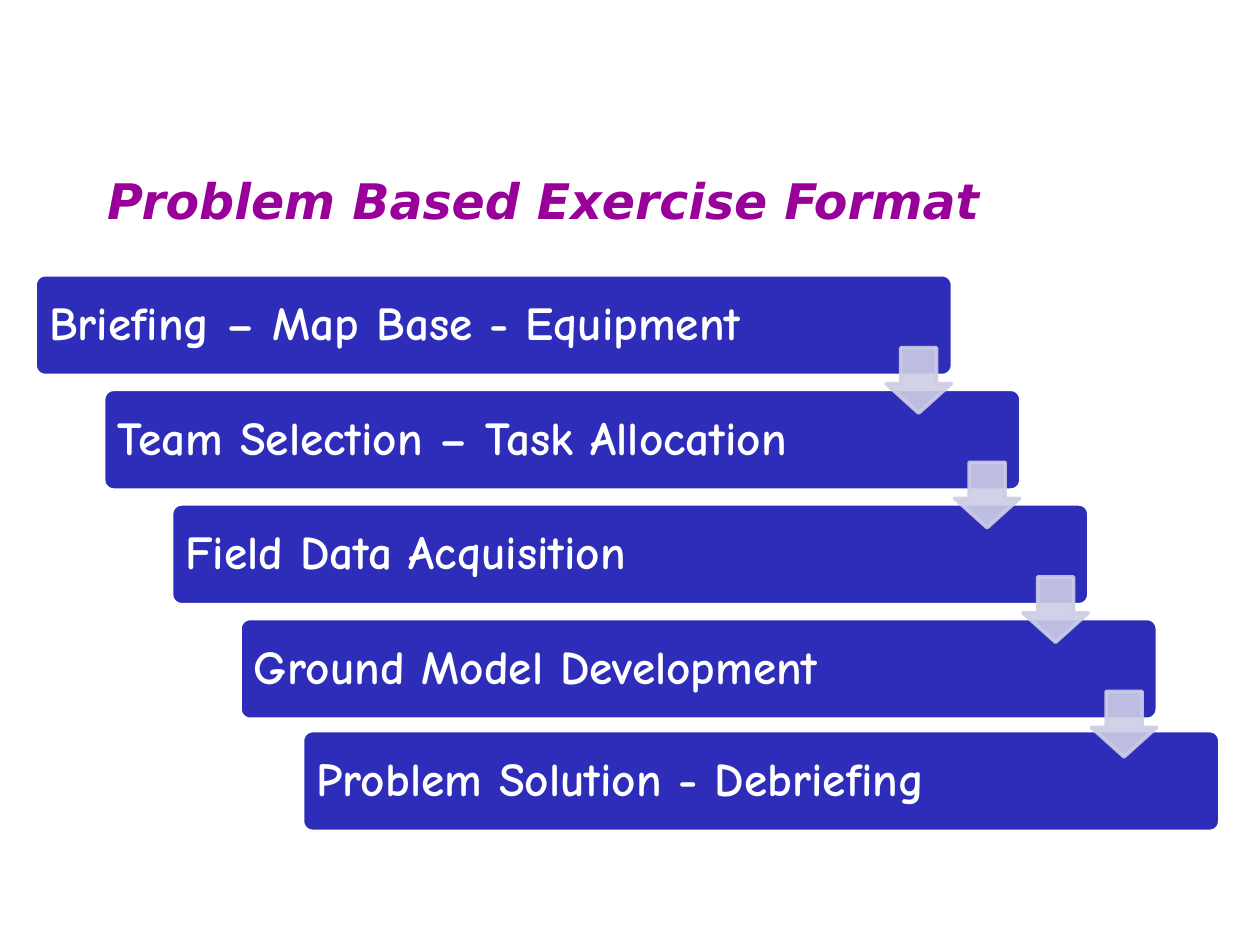
"""Build the stepped process slide for the problem based exercise format."""
import pptx
import pptx.dml.color
import pptx.enum.shapes
import pptx.enum.text
import pptx.oxml.ns
import pptx.util
from lxml import etree

Cm, Pt = pptx.util.Cm, pptx.util.Pt
MSO = pptx.enum.shapes.MSO_SHAPE
MIDDLE = pptx.enum.text.MSO_ANCHOR.MIDDLE
LEFT = pptx.enum.text.PP_ALIGN.LEFT

THEME = {
    "bar": "2D2DB9",
    "edge": "FFFFFF",
    "arrow": "CDCDE6",
    "title": {"name": "DejaVu Sans", "size": Pt(28), "bold": True, "italic": True, "color": "990099"},
    "step": {"name": "Comic Neue", "size": Pt(27), "bold": True, "italic": False, "color": "FFFFFF"},
}
STEPS = [
    ("Briefing – Map Base - Equipment", 0.71, 5.54),
    ("Team Selection – Task Allocation", 2.09, 7.85),
    ("Field Data Acquisition", 3.46, 10.16),
    ("Ground Model Development", 4.84, 12.47),
    ("Problem Solution - Debriefing", 6.1, 14.73),
]


def write(sp, text, style, inset):
    tf = sp.text_frame
    frame = {"word_wrap": True, "vertical_anchor": MIDDLE, "margin_left": inset, "margin_right": inset}
    for key, value in frame.items():
        setattr(tf, key, value)
    p = tf.paragraphs[0]
    p.alignment = LEFT
    r = p.add_run()
    r.text = text
    for key, value in style.items():
        if key == "color":
            r.font.color.rgb = pptx.dml.color.RGBColor.from_string(value)
        else:
            setattr(r.font, key, value)
    return p


def add_block(s, kind, box, adjustments, fill, line, alpha=100):
    sp = s.shapes.add_shape(kind, *[Cm(v) for v in box])
    sp.shadow.inherit = False
    for i, value in enumerate(adjustments):
        sp.adjustments[i] = value
    sp.fill.solid()
    sp.line.width = Pt(2)
    for part, color in ((sp.fill.fore_color, fill), (sp.line.color, line)):
        part.rgb = pptx.dml.color.RGBColor.from_string(color)
    if alpha < 100:
        for clr in sp._element.spPr.iter(pptx.oxml.ns.qn("a:srgbClr")):
            etree.SubElement(clr, pptx.oxml.ns.qn("a:alpha"), val=str(alpha * 1000))
    return sp


prs = pptx.Presentation()
prs.slide_width, prs.slide_height = Cm(25.4), Cm(19.05)
s = prs.slides.add_slide(prs.slide_layouts[5])

title = s.shapes.title
place = {"left": Cm(1.91), "top": Cm(3.18), "width": Cm(21.59), "height": Cm(1.7)}
for key, value in place.items():
    setattr(title, key, value)
write(title, "Problem Based Exercise Format", THEME["title"], Cm(0.25))

for text, left, top in STEPS:
    bar = add_block(s, MSO.ROUNDED_RECTANGLE, (left, top, 18.49, 2.03), [0.1], THEME["bar"], THEME["edge"])
    p = write(bar, text, THEME["step"], Cm(0.22))
    p.line_spacing = 0.9

for i in range(len(STEPS) - 1):
    box = (17.86 + 1.38 * i, 7.01 + 2.31 * i, 1.32, 1.32)
    add_block(s, MSO.DOWN_ARROW, box, [0.55, 0.45], THEME["arrow"], THEME["arrow"], alpha=90)

prs.save("out.pptx")
